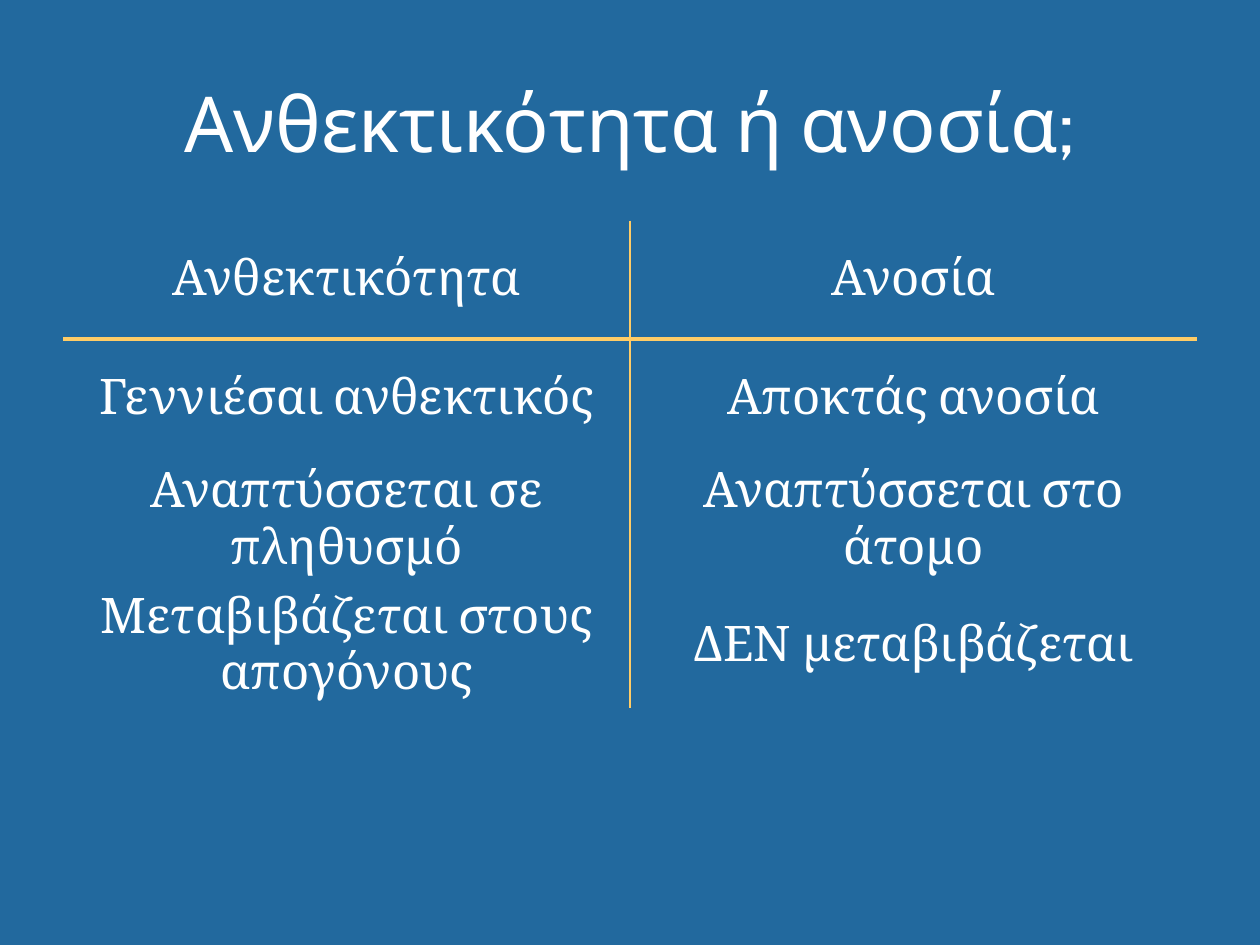
import pptx
import pptx.dml.color
import pptx.enum.text
import pptx.oxml
import pptx.oxml.ns
import pptx.util

PX = 9144  # EMU per px, 100 px to the inch
BLUE = pptx.dml.color.RGBColor(0x22, 0x69, 0x9E)
GOLD = pptx.dml.color.RGBColor(0xFF, 0xCC, 0x66)
WHITE = pptx.dml.color.RGBColor(0xFF, 0xFF, 0xFF)

TITLE_FONT = {"name": "Cabin", "size": pptx.util.Pt(44), "bold": False}
CELL_FONT = {"name": "Cambria", "size": pptx.util.Pt(28), "bold": False}

ROW_HEIGHT = 94
ROWS = [
    ("Ανθεκτικότητα", "Ανοσία"),
    ("Γεννιέσαι ανθεκτικός", "Αποκτάς ανοσία"),
    ("Αναπτύσσεται σε πληθυσμό", "Αναπτύσσεται στο άτομο"),
    ("Μεταβιβάζεται στους απογόνους", "ΔΕΝ μεταβιβάζεται"),
]


def emu(*lengths):
    return [pptx.util.Emu(length * PX) for length in lengths]


def write(tf, text, font):
    """Put one centred white paragraph into a text frame."""
    p = tf.paragraphs[0]
    p.alignment = pptx.enum.text.PP_ALIGN.CENTER
    r = p.add_run()
    r.text = text
    for name, value in font.items():
        setattr(r.font, name, value)
    r.font.color.rgb = WHITE
    return p


def set_borders(cell, widths):
    """Draw the sides given in points; clear the other sides."""
    tcPr = cell._tc.get_or_add_tcPr()
    for side in "LRTB":
        width = pptx.util.Pt(widths.get(side, 0))
        fill = (f'<a:solidFill><a:srgbClr val="{GOLD}"/></a:solidFill>'
                if width else "<a:noFill/>")
        tcPr.append(pptx.oxml.parse_xml(
            f'<a:ln{side} {pptx.oxml.ns.nsdecls("a")} w="{width}">{fill}</a:ln{side}>'))


def space_before(p, percent):
    p._p.get_or_add_pPr().append(pptx.oxml.parse_xml(
        f'<a:spcBef {pptx.oxml.ns.nsdecls("a")}>'
        f'<a:spcPct val="{percent * 1000}"/></a:spcBef>'))


def add_title(slide, text, x, y, w, h):
    sp = slide.shapes.title
    sp.left, sp.top, sp.width, sp.height = emu(x, y, w, h)
    tf = sp.text_frame
    tf.word_wrap = True
    tf.vertical_anchor = pptx.enum.text.MSO_ANCHOR.MIDDLE
    write(tf, text, TITLE_FONT)


def add_comparison(slide, rows, x, y, w):
    h = ROW_HEIGHT * len(rows)
    table = slide.shapes.add_table(len(rows), len(rows[0]), *emu(x, y, w, h)).table
    table.first_row = table.horz_banding = False
    for i, texts in enumerate(rows):
        table.rows[i].height = emu(ROW_HEIGHT)[0]
        for j, text in enumerate(texts):
            cell = table.cell(i, j)
            cell.vertical_anchor = pptx.enum.text.MSO_ANCHOR.MIDDLE
            space_before(write(cell.text_frame, text, CELL_FONT), 20)
            widths = {"L" if j else "R": 1.5}
            if i < 2:
                widths["T" if i else "B"] = 3
            set_borders(cell, widths)
            cell.fill.background()


def main():
    prs = pptx.Presentation()
    prs.slide_width, prs.slide_height = emu(1000, 750)
    slide = prs.slides.add_slide(prs.slide_layouts.get_by_name("Title Only"))
    slide.background.fill.solid()
    slide.background.fill.fore_color.rgb = BLUE
    add_title(slide, "Ανθεκτικότητα ή ανοσία;", 75, 34, 850, 125)
    add_comparison(slide, ROWS, 50, 175, 900)
    prs.save("out.pptx")


if __name__ == "__main__":
    main()
